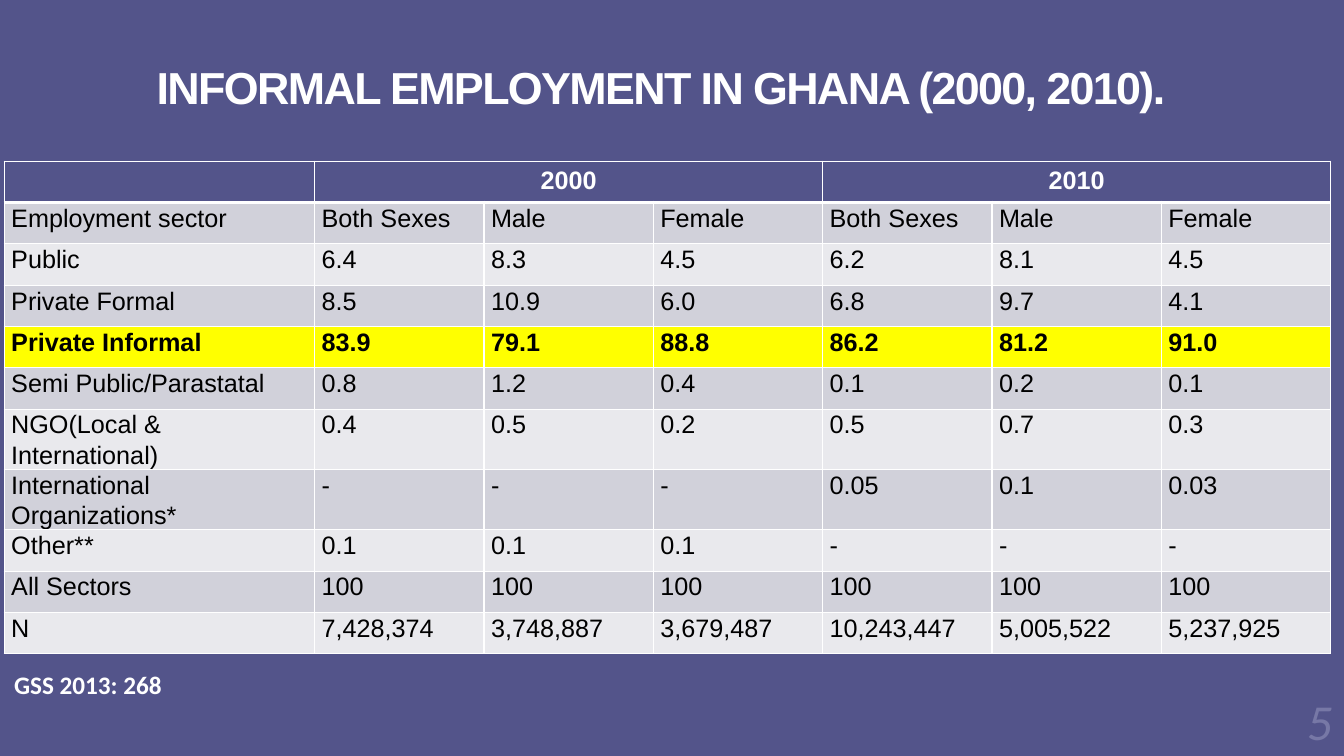
from dataclasses import dataclass

from lxml.etree import SubElement
from pptx import Presentation
from pptx.dml.color import RGBColor
from pptx.enum.text import MSO_ANCHOR as Anchor, MSO_AUTO_SIZE as AutoSize, PP_ALIGN as Align
from pptx.oxml.ns import qn
from pptx.util import Inches, Length, Pt

COLORS = {
    "ground": "53548A",
    "white": "FFFFFF",
    "black": "000000",
    "dark_band": "D1D1DA",
    "light_band": "E9E9ED",
    "highlight": "FFFF00",
    "page_number": "7778A6",
}
GRID_COLUMNS, GRID_ROWS = 160, 90
UNIT = Inches(1 / 12)
LABEL_COLUMN, VALUE_COLUMN, TABLE_ROW = 36.96, 20.16, 4.92
YEARS = ["2000", "2010"]
GROUPS = ["Both Sexes", "Male", "Female"]


@dataclass(frozen=True)
class Area:
    column: float
    row: float
    width: float
    height: float

    def box(self) -> tuple[Length, Length, Length, Length]:
        return units(self.column), units(self.row), units(self.width), units(self.height)


@dataclass(frozen=True)
class Style:
    size: float
    color: str = "white"
    bold: bool = False
    italic: bool = False
    family: str = "Arial"
    align: Align = Align.LEFT
    spacing: float = 1.0


@dataclass(frozen=True)
class Sector:
    label: str
    values: list[str]
    highlighted: bool = False


@dataclass(frozen=True)
class Caption:
    text: str
    area: Area
    style: Style


SECTORS = [
    Sector("Employment sector", GROUPS * len(YEARS)),
    Sector("Public", ["6.4", "8.3", "4.5", "6.2", "8.1", "4.5"]),
    Sector("Private Formal", ["8.5", "10.9", "6.0", "6.8", "9.7", "4.1"]),
    Sector("Private Informal", ["83.9", "79.1", "88.8", "86.2", "81.2", "91.0"], True),
    Sector("Semi Public/Parastatal", ["0.8", "1.2", "0.4", "0.1", "0.2", "0.1"]),
    Sector("NGO(Local & International)", ["0.4", "0.5", "0.2", "0.5", "0.7", "0.3"]),
    Sector("International Organizations*", ["-", "-", "-", "0.05", "0.1", "0.03"]),
    Sector("Other**", ["0.1", "0.1", "0.1", "-", "-", "-"]),
    Sector("All Sectors", ["100"] * 6),
    Sector("N", ["7,428,374", "3,748,887", "3,679,487", "10,243,447", "5,005,522", "5,237,925"]),
]
CAPTIONS = [
    Caption("GSS 2013: 268", Area(0.5, 79.1, 20, 8.5), Style(18, bold=True, family="Calibri")),
    Caption("5", Area(150, 81.6, 9.8, 8.4),
            Style(36, "page_number", italic=True, family="Calibri", align=Align.RIGHT)),
]


def units(count: float) -> Length:
    return Length(round(count * UNIT))


def rgb(name: str) -> RGBColor:
    return RGBColor.from_string(COLORS[name])


def write(frame, text: str, style: Style) -> None:
    frame.text = text
    paragraph = frame.paragraphs[0]
    paragraph.alignment = style.align
    paragraph.line_spacing = style.spacing
    font = paragraph.font
    font.name, font.size = style.family, Pt(style.size)
    font.bold, font.italic = style.bold, style.italic
    font.color.rgb = rgb(style.color)


def paint_cell(cell, fill: str, top: float = 1, bottom: float = 1) -> None:
    properties = cell._tc.get_or_add_tcPr()
    for side, weight in {"L": 1, "R": 1, "T": top, "B": bottom}.items():
        border = SubElement(properties, qn(f"a:ln{side}"), w=str(Pt(weight)))
        solid = SubElement(border, qn("a:solidFill"))
        SubElement(solid, qn("a:srgbClr"), val=COLORS["white"])
    cell.fill.solid()
    cell.fill.fore_color.rgb = rgb(fill)


def add_title(slide, text: str) -> None:
    title = slide.shapes.title
    title.left, title.top, title.width, title.height = Area(8.64, 0, 141.36, 21.72).box()
    frame = title.text_frame
    frame.auto_size, frame.vertical_anchor = AutoSize.NONE, Anchor.MIDDLE
    write(frame, text, Style(32, bold=True, align=Align.CENTER, spacing=0.85))
    frame.paragraphs[0].runs[0]._r.get_or_add_rPr().set("spc", "-120")


def add_employment_table(slide) -> None:
    value_count = len(YEARS) * len(GROUPS)
    row_count = len(SECTORS) + 1
    area = Area(0.5, 19.2, LABEL_COLUMN + value_count * VALUE_COLUMN, row_count * TABLE_ROW)
    table = slide.shapes.add_table(row_count, value_count + 1, *area.box()).table
    table.horz_banding = False
    for index, column in enumerate(table.columns):
        column.width = units(VALUE_COLUMN if index else LABEL_COLUMN)
    for row in table.rows:
        row.height = units(TABLE_ROW)

    for cell in table.rows[0].cells:
        paint_cell(cell, "ground", bottom=3)
    for index, year in enumerate(YEARS):
        first = 1 + index * len(GROUPS)
        heading = table.cell(0, first)
        heading.merge(table.cell(0, first + len(GROUPS) - 1))
        write(heading.text_frame, year, Style(18, bold=True, align=Align.CENTER))

    for row, sector in enumerate(SECTORS, 1):
        band = "dark_band" if row % 2 else "light_band"
        fill = "highlight" if sector.highlighted else band
        style = Style(18, "black", bold=sector.highlighted, spacing=1.07)
        for column, text in enumerate([sector.label, *sector.values]):
            cell = table.cell(row, column)
            cell.margin_left = cell.margin_right = Inches(0.07)
            cell.margin_top = cell.margin_bottom = 0
            write(cell.text_frame, text, style)
            paint_cell(cell, fill, top=3 if row == 1 else 1)


def add_caption(slide, caption: Caption) -> None:
    frame = slide.shapes.add_textbox(*caption.area.box()).text_frame
    frame.word_wrap = True
    write(frame, caption.text, caption.style)


def main() -> None:
    deck = Presentation()
    deck.slide_width, deck.slide_height = units(GRID_COLUMNS), units(GRID_ROWS)
    slide = deck.slides.add_slide(deck.slide_layouts[5])
    slide.background.fill.solid()
    slide.background.fill.fore_color.rgb = rgb("ground")
    add_title(slide, "INFORMAL EMPLOYMENT IN GHANA (2000, 2010). ")
    add_employment_table(slide)
    for caption in CAPTIONS:
        add_caption(slide, caption)
    deck.save("out.pptx")


if __name__ == "__main__":
    main()
